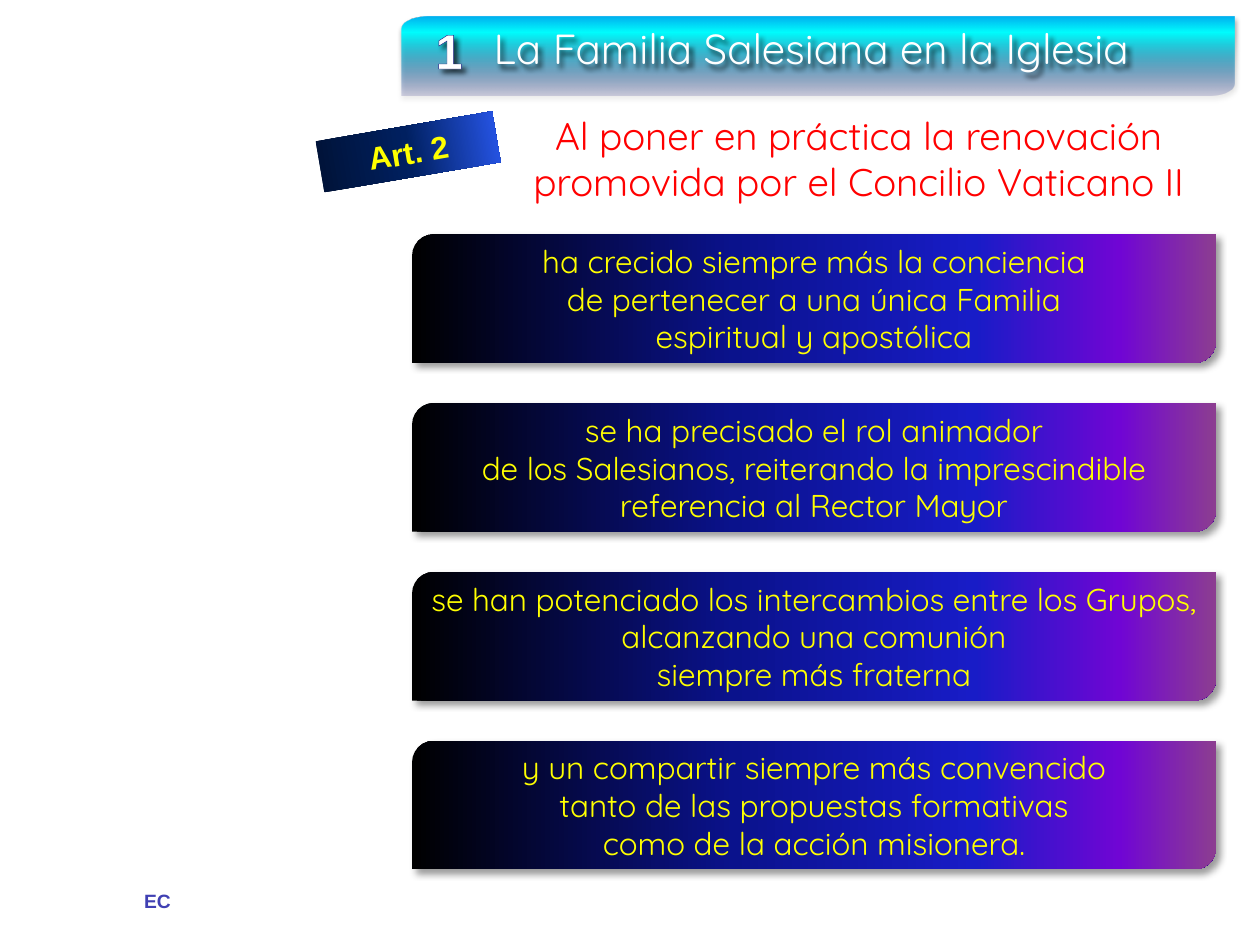
from math import cos, pi, sin

from lxml import etree
from pptx import Presentation
from pptx.dml.color import RGBColor
from pptx.enum.shapes import MSO_SHAPE
from pptx.enum.text import MSO_ANCHOR, PP_ALIGN
from pptx.oxml.ns import qn
from pptx.util import Inches, Pt

CENTER, LEFT = PP_ALIGN.CENTER, PP_ALIGN.LEFT
MIDDLE = MSO_ANCHOR.MIDDLE
RECT, DIAGONAL_ROUND = MSO_SHAPE.RECTANGLE, MSO_SHAPE.ROUND_2_DIAG_RECTANGLE

WHITE = RGBColor(0xFF, 0xFF, 0xFF)
BLACK = RGBColor(0x00, 0x00, 0x00)
YELLOW = RGBColor(0xFF, 0xFF, 0x00)
RED = RGBColor(0xFF, 0x00, 0x00)
INDIGO = RGBColor(0x40, 0x40, 0xB3)
OUTLINE_BLUE = RGBColor(0x20, 0x20, 0x86)

# Gradient stops: position in percent, colour, opacity in percent
BANNER_STOPS = [(0, RGBColor(0x1B, 0x1B, 0x7E), 16),
                (80, RGBColor(0x00, 0xFF, 0xFF), 100),
                (100, RGBColor(0x00, 0xB0, 0xF0), 100)]
LABEL_STOPS = [(0, RGBColor(0x00, 0x12, 0x36), 100),
               (50, RGBColor(0x00, 0x20, 0x60), 100),
               (100, RGBColor(0x28, 0x57, 0xEC), 100)]
PANEL_STOPS = [(0, BLACK, 100),
               (40, RGBColor(0x0A, 0x12, 0x8C), 100),
               (70, RGBColor(0x18, 0x1C, 0xC7), 100),
               (88, RGBColor(0x70, 0x05, 0xD4), 100),
               (100, RGBColor(0x8C, 0x3D, 0x91), 100)]

PANELS = [
    ["ha crecido siempre más la conciencia",
     "de pertenecer a una única Familia",
     "espiritual y apostólica"],
    ["se ha precisado el rol animador",
     "de los Salesianos, reiterando la imprescindible",
     "referencia al Rector Mayor"],
    ["se han potenciado los intercambios entre los Grupos, "
     "alcanzando una comunión",
     "siempre más fraterna"],
    ["y un compartir siempre más convencido",
     "tanto de las propuestas formativas",
     "como de la acción misionera."],
]
PANEL_TOP, PANEL_PITCH = 1.86, 1.34


def add_color(parent, color, opacity):
    node = etree.SubElement(parent, qn("a:srgbClr"), val=str(color))
    if opacity < 100:
        etree.SubElement(node, qn("a:alpha"), val=str(opacity * 1000))


def fill_gradient(shape, stops, angle=0):
    """Fill with a linear gradient; angle is clockwise degrees."""
    shape.line.fill.background()
    shape.fill.gradient()
    gradient = shape._element.spPr.find(qn("a:gradFill"))
    for child in list(gradient):
        gradient.remove(child)
    stop_list = etree.SubElement(gradient, qn("a:gsLst"))
    for position, color, opacity in stops:
        stop = etree.SubElement(stop_list, qn("a:gs"), pos=str(position * 1000))
        add_color(stop, color, opacity)
    etree.SubElement(gradient, qn("a:lin"), ang=str(angle * 60000), scaled="0")


def cast_shadow(shape, opacity, blur, distance, angle):
    shape.shadow.inherit = False
    effects = shape._element.spPr.find(qn("a:effectLst"))
    shadow = etree.SubElement(
        effects, qn("a:outerShdw"), blurRad=str(Pt(blur)),
        dist=str(Pt(distance)), dir=str(angle * 60000), rotWithShape="0")
    add_color(shadow, BLACK, opacity)


def write(shape, lines, font_name, size, color, bold=False, align=CENTER):
    frame = shape.text_frame
    for index, line in enumerate(lines):
        paragraph = frame.paragraphs[0] if index == 0 else frame.add_paragraph()
        paragraph.alignment = align
        run = paragraph.add_run()
        run.text = line
        run.font.name = font_name
        run.font.size = Pt(size)
        run.font.bold = bold
        run.font.color.rgb = color


def add_text(slide, box, text, font_name, size, color, wrap=True, **style):
    textbox = slide.shapes.add_textbox(*map(Inches, box))
    textbox.text_frame.word_wrap = wrap
    write(textbox, [text], font_name, size, color, **style)
    return textbox


def add_block(slide, preset, box, stops):
    block = slide.shapes.add_shape(preset, *map(Inches, box))
    block.shadow.inherit = False
    fill_gradient(block, stops)
    block.text_frame.word_wrap = True
    block.text_frame.vertical_anchor = MIDDLE
    return block


def add_banner(slide, left, top, width, height, radius_x, radius_y):
    """Draw a bar with elliptical top-left and bottom-right corners."""
    right, bottom = left + width, top + height
    steps = 12
    arc = [(radius_x * (1 - cos(pi / 2 * i / steps)),
            radius_y * (1 - sin(pi / 2 * i / steps))) for i in range(steps + 1)]
    points = [(left + x, top + y) for x, y in arc] + [(right, top)]
    points += [(right - x, bottom - y) for x, y in arc] + [(left, bottom)]
    points = [(Inches(x), Inches(y)) for x, y in points]
    builder = slide.shapes.build_freeform(*points[0])
    builder.add_line_segments(points[1:], close=True)
    banner = builder.convert_to_shape()
    fill_gradient(banner, BANNER_STOPS, angle=270)
    cast_shadow(banner, 35, 3.1, 1.8, 90)


def add_heading(slide):
    add_banner(slide, 3.19, 0.13, 6.61, 0.63, 0.21, 0.1)
    number = add_text(slide, (3.35, 0.11, 0.43, 0.57), "1", "Arial", 28, WHITE,
                      wrap=False, bold=True)
    properties = number.text_frame.paragraphs[0].runs[0].font._element
    properties.set("spc", "50")
    outline = etree.Element(qn("a:ln"), w=str(Pt(1)))
    add_color(etree.SubElement(outline, qn("a:solidFill")), OUTLINE_BLUE, 100)
    properties.insert(0, outline)
    title = add_text(slide, (3.82, 0.13, 5.83, 0.5),
                     "La Familia Salesiana en la Iglesia",
                     "Quicksand", 24, WHITE, align=LEFT)
    for textbox in (number, title):
        cast_shadow(textbox, 70, 3, 3, 45)


def main():
    presentation = Presentation()
    presentation.slide_width = Inches(10)
    presentation.slide_height = Inches(7.5)
    slide = presentation.slides.add_slide(presentation.slide_layouts[6])

    add_text(slide, (1.04, 7.01, 0.42, 0.29), "EC", "Arial", 11, INDIGO,
             wrap=False, bold=True)
    add_heading(slide)

    article = add_block(slide, RECT, (2.53, 1, 1.42, 0.41), LABEL_STOPS)
    article.rotation = 350.3
    write(article, ["Art. 2"], "Arial", 18, YELLOW, bold=True)

    add_text(slide, (3.98, 0.84, 5.67, 0.84),
             "Al poner en práctica la renovación "
             "promovida por el Concilio Vaticano II", "Quicksand", 22, RED)

    for index, lines in enumerate(PANELS):
        box = (3.27, PANEL_TOP + index * PANEL_PITCH, 6.38, 1.02)
        panel = add_block(slide, DIAGONAL_ROUND, box, PANEL_STOPS)
        cast_shadow(panel, 40, 4, 3, 45)
        write(panel, lines, "Quicksand", 18, YELLOW)

    presentation.save("out.pptx")


if __name__ == "__main__":
    main()
